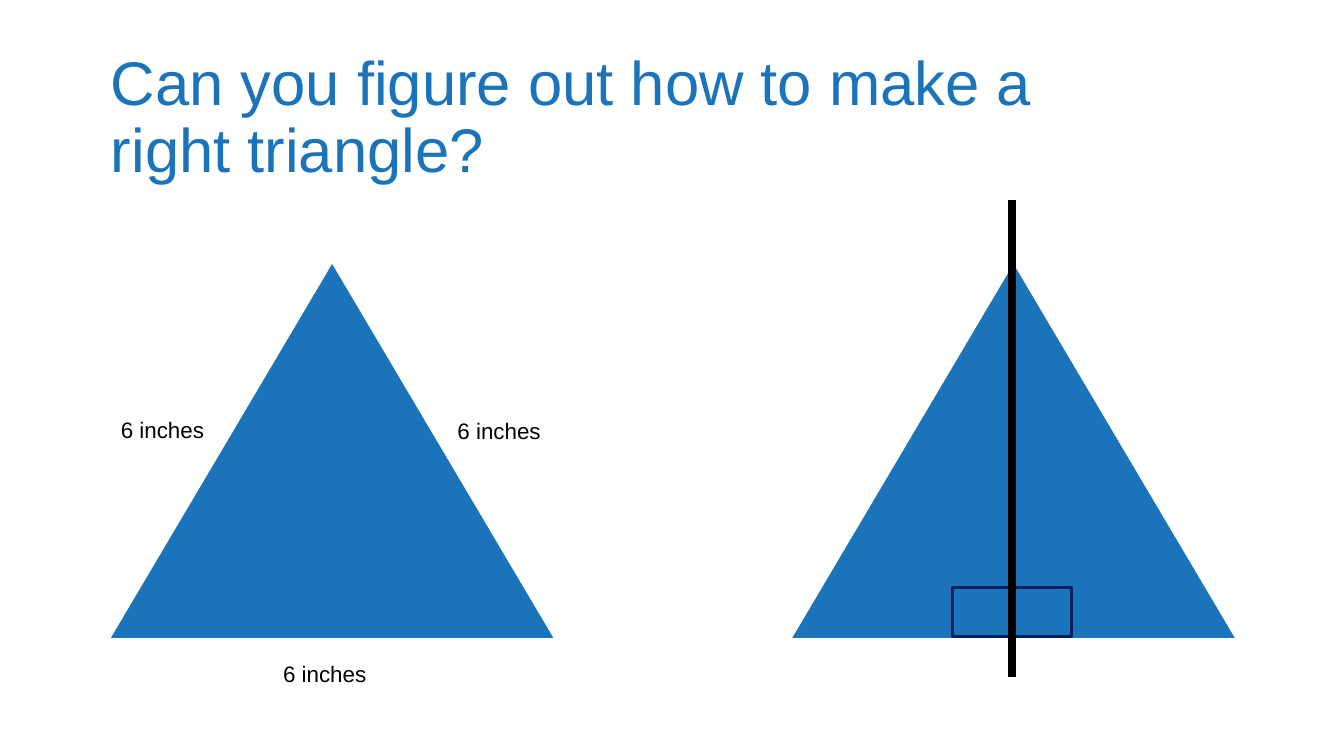
"""Build a slide that splits an equilateral triangle into right triangles."""
from lxml.etree import SubElement
from pptx import Presentation
from pptx.dml.color import RGBColor
from pptx.enum.shapes import MSO_CONNECTOR, MSO_SHAPE
from pptx.enum.text import MSO_ANCHOR
from pptx.oxml.ns import qn
from pptx.util import Pt

BLUE = RGBColor(0x1B, 0x73, 0xB9)
NAVY = RGBColor(0x00, 0x20, 0x60)
BLACK = RGBColor(0, 0, 0)

TITLE = "Can you figure out how to make a right triangle?"
SIDE_LABELS = [
    ("6 inches", 79.2, 293.8),
    ("6 inches", 319.7, 294.5),
    ("6 inches", 195.1, 468),
]
LEFT_X, RIGHT_X, TRIANGLE_TOP = 79.2, 565.9, 188.6
TRIANGLE_W, TRIANGLE_H = 316.1, 267.1
MARKER_BOX = (680.4, 419.8, 85, 34.6)
CUT_X, CUT_TOP, CUT_BOTTOM = 722.9, 142.6, 483.8


def add_preset(s, kind, box):
    sp = s.shapes.add_shape(kind, *map(Pt, box))
    sp.shadow.inherit = False
    return sp


def add_triangle(s, left):
    box = (left, TRIANGLE_TOP, TRIANGLE_W, TRIANGLE_H)
    sp = add_preset(s, MSO_SHAPE.ISOSCELES_TRIANGLE, box)
    sp.fill.solid()
    sp.fill.fore_color.rgb = BLUE
    sp.line.fill.background()


def add_text(s, text, box, size, color):
    tf = s.shapes.add_textbox(*map(Pt, box)).text_frame
    tf.word_wrap = True
    tf.text = text
    font = tf.paragraphs[0].runs[0].font
    font.name, font.size = "Arial", Pt(size)
    font.color.rgb = color
    return tf


def add_title(s):
    tf = add_text(s, TITLE, (79.2, 38.9, 672.5, 93.6), 44, BLUE)
    tf.margin_left = tf.margin_top = tf.margin_right = tf.margin_bottom = 0
    tf.vertical_anchor = MSO_ANCHOR.BOTTOM
    tf.paragraphs[0].line_spacing = 0.9


def add_marker(s):
    sp = add_preset(s, MSO_SHAPE.RECTANGLE, MARKER_BOX)
    sp.fill.background()
    sp.line.color.rgb = NAVY
    sp.line.width = Pt(2.25)


def add_cut(s):
    ends = map(Pt, (CUT_X, CUT_TOP, CUT_X, CUT_BOTTOM))
    cut = s.shapes.add_connector(MSO_CONNECTOR.STRAIGHT, *ends)
    cut.line.color.rgb = BLACK
    cut.line.width = Pt(6)
    SubElement(cut._element.spPr, qn("a:effectLst"))


def main():
    prs = Presentation()
    prs.slide_width, prs.slide_height = Pt(960), Pt(540)
    s = prs.slides.add_slide(prs.slide_layouts[6])
    add_triangle(s, RIGHT_X)
    add_title(s)
    add_marker(s)
    add_cut(s)
    add_triangle(s, LEFT_X)
    for text, left, top in SIDE_LABELS:
        add_text(s, text, (left, top, 75.6, 26.6), 16, BLACK)
    prs.save("out.pptx")


if __name__ == "__main__":
    main()
